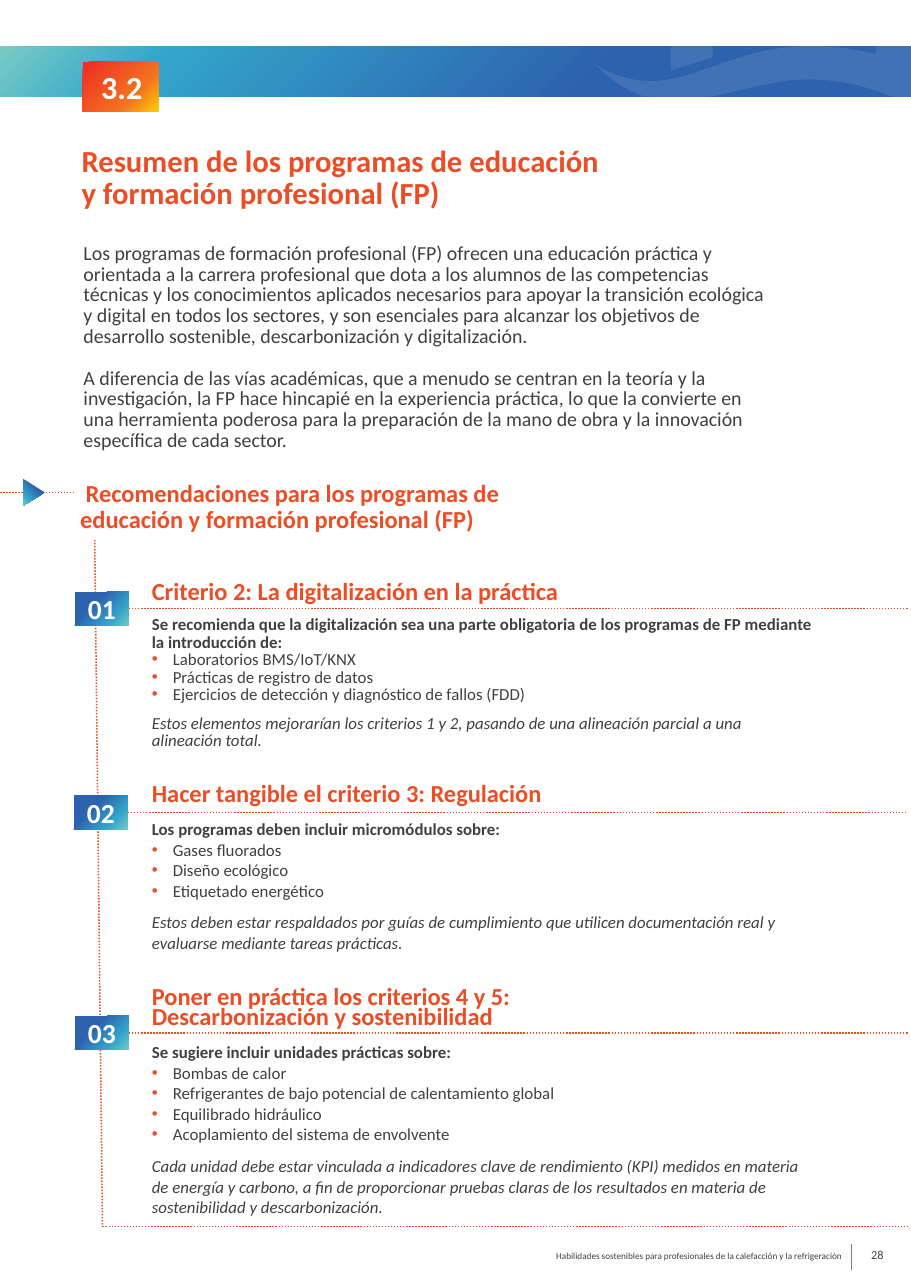
"""Build the page on vocational training programmes and their recommendations."""
from copy import deepcopy

from lxml import etree
from pptx import Presentation
from pptx.dml.color import RGBColor
from pptx.enum.dml import MSO_LINE
from pptx.enum.shapes import MSO_CONNECTOR, MSO_SHAPE
from pptx.enum.text import MSO_ANCHOR, MSO_AUTO_SIZE, PP_ALIGN
from pptx.oxml.ns import qn
from pptx.util import Inches, Pt

LEFT, CENTER, RIGHT = PP_ALIGN.LEFT, PP_ALIGN.CENTER, PP_ALIGN.RIGHT
TOP, MIDDLE = MSO_ANCHOR.TOP, MSO_ANCHOR.MIDDLE
RECTANGLE, TRIANGLE = MSO_SHAPE.RECTANGLE, MSO_SHAPE.ISOSCELES_TRIANGLE
STRAIGHT, DOTTED = MSO_CONNECTOR.STRAIGHT, MSO_LINE.ROUND_DOT

WHITE = RGBColor(0xFF, 0xFF, 0xFF)
INK = RGBColor(0x40, 0x40, 0x40)
GREY = RGBColor(0x7F, 0x7F, 0x7F)
ACCENT = RGBColor(0xED, 0x4D, 0x24)
BLUE, SKY, TEAL = RGBColor(0x2D, 0x62, 0xAE), RGBColor(0x33, 0xA5, 0xCC), RGBColor(0x77, 0xCB, 0xC4)
RED, ORANGE, YELLOW = RGBColor(0xEE, 0x2D, 0x24), RGBColor(0xF3, 0x73, 0x21), RGBColor(0xFF, 0xCD, 0x05)
BANNER_STOPS = [(0.35, BLUE), (0.82, SKY), (1, TEAL)]
BADGE_STOPS = [(0.35, BLUE), (0.74, SKY), (1, TEAL)]
CHAPTER_STOPS = [(0.03, RED), (0.68, ORANGE), (1, YELLOW)]

WIDTH, HEIGHT = 8.27, 11.69
BANNER_TOP, BANNER_BOTTOM = 0.42, 0.88
BADGE_WIDTH, BADGE_HEIGHT = 0.49, 0.31
RULE_END = 8.24
BULLET_INDENT = 0.19
SMALL_GAP, SECTION_GAP = 7.3, 24

FORMATS = {
    "title": ({"size": Pt(20), "bold": True}, ACCENT),
    "heading": ({"size": Pt(16), "bold": True}, ACCENT),
    "body": ({"size": Pt(13)}, INK),
    "lead": ({"size": Pt(11), "bold": True}, INK),
    "bullet": ({"size": Pt(11)}, INK),
    "remark": ({"size": Pt(11), "italic": True}, INK),
    "chapter": ({"size": Pt(21), "bold": True}, WHITE),
    "badge": ({"size": Pt(18), "bold": True}, WHITE),
    "footer": ({"size": Pt(6)}, INK),
    "page": ({"size": Pt(8)}, INK),
}

TITLE = "Resumen de los programas de educación y formación profesional (FP)"
INTRODUCTION = [
    "Los programas de formación profesional (FP) ofrecen una educación práctica y orientada a la carrera profesional que dota a los alumnos de las competencias técnicas y los conocimientos aplicados necesarios para apoyar la transición ecológica y digital en todos los sectores, y son esenciales para alcanzar los objetivos de desarrollo sostenible, descarbonización y digitalización.",
    "A diferencia de las vías académicas, que a menudo se centran en la teoría y la investigación, la FP hace hincapié en la experiencia práctica, lo que la convierte en una herramienta poderosa para la preparación de la mano de obra y la innovación específica de cada sector.",
]
RECOMMENDATIONS = "Recomendaciones para los programas de educación y formación profesional (FP)"
FOOTER = "Habilidades sostenibles para profesionales de la calefacción y la refrigeración"
SECTIONS = [
    {"badge": ("01", 0.68, 5.37), "spacing": 11.4,
     "heading": ["Criterio 2: La digitalización en la práctica"],
     "lead": ["Se recomienda que la digitalización sea una parte obligatoria de los programas de FP mediante la introducción de:"],
     "bullet": ["Laboratorios BMS/IoT/KNX", "Prácticas de registro de datos",
                "Ejercicios de detección y diagnóstico de fallos (FDD)"],
     "remark": ["Estos elementos mejorarían los criterios 1 y 2, pasando de una alineación parcial a una alineación total."]},
    {"badge": ("02", 0.67, 7.22), "spacing": 13.4,
     "heading": ["Hacer tangible el criterio 3: Regulación"],
     "lead": ["Los programas deben incluir micromódulos sobre:"],
     "bullet": ["Gases fluorados", "Diseño ecológico", "Etiquetado energético"],
     "remark": ["Estos deben estar respaldados por guías de cumplimiento que utilicen documentación real y evaluarse mediante tareas prácticas."]},
    {"badge": ("03", 0.68, 9.22), "spacing": 13.4,
     "heading": ["Poner en práctica los criterios 4 y 5:", "Descarbonización y sostenibilidad"],
     "lead": ["Se sugiere incluir unidades prácticas sobre:"],
     "bullet": ["Bombas de calor", "Refrigerantes de bajo potencial de calentamiento global",
                "Equilibrado hidráulico", "Acoplamiento del sistema de envolvente"],
     "remark": ["Cada unidad debe estar vinculada a indicadores clave de rendimiento (KPI) medidos en materia de energía y carbono, a fin de proporcionar pruebas claras de los resultados en materia de sostenibilidad y descarbonización."]},
]
GAPS = {"heading": SECTION_GAP, "lead": SMALL_GAP, "bullet": 0, "remark": SMALL_GAP}

WAVE_START = (7.95, 0.49)
WAVE_CURVES = [
    ((6.58, 0.16), (6.25, 1.08), (5.41, 0.59)),
    ((5.92, 1.11), (6.38, 0.88), (6.98, 0.76)),
    ((7.49, 0.65), (8, 0.79), (8.34, 1.01)),
]
WAVE_CORNERS = [(WIDTH, BANNER_TOP), (7.96, BANNER_TOP)]
TOWER = [(6.09, BANNER_TOP), (6.47, BANNER_TOP), (6.47, 0.52), (6.09, 0.64)]


def write(frame, lines, anchor=TOP, align=LEFT):
    """Fill a frame from (style, text, line spacing, space before, first indent) lines."""
    frame.word_wrap, frame.auto_size, frame.vertical_anchor = True, MSO_AUTO_SIZE.NONE, anchor
    for index, (style, text, spacing, gap, indent) in enumerate(lines):
        paragraph = frame.add_paragraph() if index else frame.paragraphs[0]
        properties = paragraph._p.get_or_add_pPr()
        properties.set("marL", str(Inches(BULLET_INDENT) if style == "bullet" else 0))
        properties.set("indent", str(Inches(-BULLET_INDENT if style == "bullet" else indent)))
        if style == "bullet":
            color = etree.SubElement(properties, qn("a:buClr"))
            etree.SubElement(color, qn("a:srgbClr"), val=str(ACCENT))
            etree.SubElement(properties, qn("a:buFont"), typeface="Arial")
            etree.SubElement(properties, qn("a:buChar"), char="•")
        paragraph.alignment = align
        paragraph.space_before = Pt(gap if index else 0)
        if spacing:
            paragraph.line_spacing = Pt(spacing)
        run = paragraph.add_run()
        run.text = text
        values, ink = FORMATS[style]
        for name, value in values.items():
            setattr(run.font, name, value)
        run.font.name = "Calibri"
        run.font.color.rgb = ink


def add_text(slide, box, lines, **options):
    write(slide.shapes.add_textbox(*map(Inches, box)).text_frame, lines, **options)


def add_gradient_shape(slide, kind, box, stops, rotation=0):
    shape = slide.shapes.add_shape(kind, *map(Inches, box))
    shape.shadow.inherit = False
    shape.line.fill.background()
    shape.rotation = rotation
    shape.fill.gradient()
    shape.fill.gradient_angle = 315
    stop_list = shape._element.spPr.find(".//" + qn("a:gsLst"))
    stop_list.append(deepcopy(stop_list[-1]))
    for stop, (position, color) in zip(shape.fill.gradient_stops, stops):
        stop.position = position
        stop.color.rgb = color
    return shape


def add_rule(slide, start, end, color=ACCENT, weight=1, dash=DOTTED):
    rule = slide.shapes.add_connector(STRAIGHT, *map(Inches, start + end))
    rule.line.color.rgb, rule.line.width = color, Pt(weight)
    if dash:
        rule.line.dash_style = dash
    etree.SubElement(rule._element.spPr, qn("a:effectLst"))
    return rule


def curve_points(start, curves, steps=24):
    points = [start]
    for first, second, end in curves:
        origin = points[-1]
        for step in range(1, steps + 1):
            t = step / steps
            weights = ((1 - t) ** 3, 3 * t * (1 - t) ** 2, 3 * t * t * (1 - t), t ** 3)
            points.append(tuple(sum(w * p[axis] for w, p in zip(weights, (origin, first, second, end)))
                                for axis in (0, 1)))
    return [(min(x, WIDTH), min(y, BANNER_BOTTOM)) for x, y in points]


def add_veil(slide, points):
    corners = [(Inches(x), Inches(y)) for x, y in points]
    builder = slide.shapes.build_freeform(*corners[0], scale=1.0)
    builder.add_line_segments(corners[1:], close=True)
    veil = builder.convert_to_shape()
    veil.shadow.inherit = False
    veil.line.fill.background()
    veil.fill.solid()
    veil.fill.fore_color.rgb = WHITE
    etree.SubElement(veil._element.spPr.find(".//" + qn("a:srgbClr")), qn("a:alpha"), val="10000")


def main():
    presentation = Presentation()
    presentation.slide_width, presentation.slide_height = Inches(WIDTH), Inches(HEIGHT)
    slide = presentation.slides.add_slide(presentation.slide_layouts[5])

    add_gradient_shape(slide, RECTANGLE, (0, BANNER_TOP, WIDTH, BANNER_BOTTOM - BANNER_TOP), BANNER_STOPS, 180)
    for points in (curve_points(WAVE_START, WAVE_CURVES) + WAVE_CORNERS, TOWER):
        add_veil(slide, points)
    chapter = add_gradient_shape(slide, RECTANGLE, (0.75, 0.56, 0.69, 0.45), CHAPTER_STOPS)
    write(chapter.text_frame, [("chapter", "3.2", None, 0, 0.07)], anchor=MIDDLE)

    title = slide.shapes.title
    title.left, title.top, title.width, title.height = map(Inches, (0.64, 1.28, 5.09, 0.69))
    write(title.text_frame, [("title", TITLE, 21, 0, 0)])
    add_text(slide, (0.66, 2.16, 6.47, 1.98), [("body", text, 13.6, 13.6, 0) for text in INTRODUCTION])
    add_text(slide, (0.63, 4.32, 4.45, 0.82), [("heading", RECOMMENDATIONS, 17, 0, 0.05)])

    for start, end in (((0, 4.47), (0.67, 4.47)), ((0.86, 4.9), (0.93, 11.13)), ((0.93, 11.13), (RULE_END, 11.13))):
        add_rule(slide, start, end)
    add_gradient_shape(slide, TRIANGLE, (0.19, 4.37, 0.24, 0.2), BADGE_STOPS, 90)

    lines = []
    for section in SECTIONS:
        number, left, top = section["badge"]
        badge = add_gradient_shape(slide, RECTANGLE, (left, top, BADGE_WIDTH, BADGE_HEIGHT), BADGE_STOPS)
        write(badge.text_frame, [("badge", number, None, 0, 0)], anchor=MIDDLE, align=CENTER)
        middle = top + BADGE_HEIGHT / 2
        add_rule(slide, (left + BADGE_WIDTH, middle), (RULE_END, middle)).begin_connect(badge, 3)
        for style, gap in GAPS.items():
            spacing = 13.4 if style == "heading" else section["spacing"]
            lines += [(style, text, spacing, 0 if index else gap, 0) for index, text in enumerate(section[style])]
    add_text(slide, (1.28, 5.26, 6.21, 5.85), lines)

    add_text(slide, (2.42, 11.3, 5.32, 0.2), [("footer", FOOTER, None, 0, 0)], align=RIGHT)
    add_rule(slide, (7.73, 11.29), (7.73, 11.53), GREY, 0.75, None)
    add_text(slide, (7.74, 11.24, 0.38, 0.3), [("page", "28", None, 0, 0)], anchor=MIDDLE, align=RIGHT)
    presentation.save("out.pptx")


if __name__ == "__main__":
    main()
